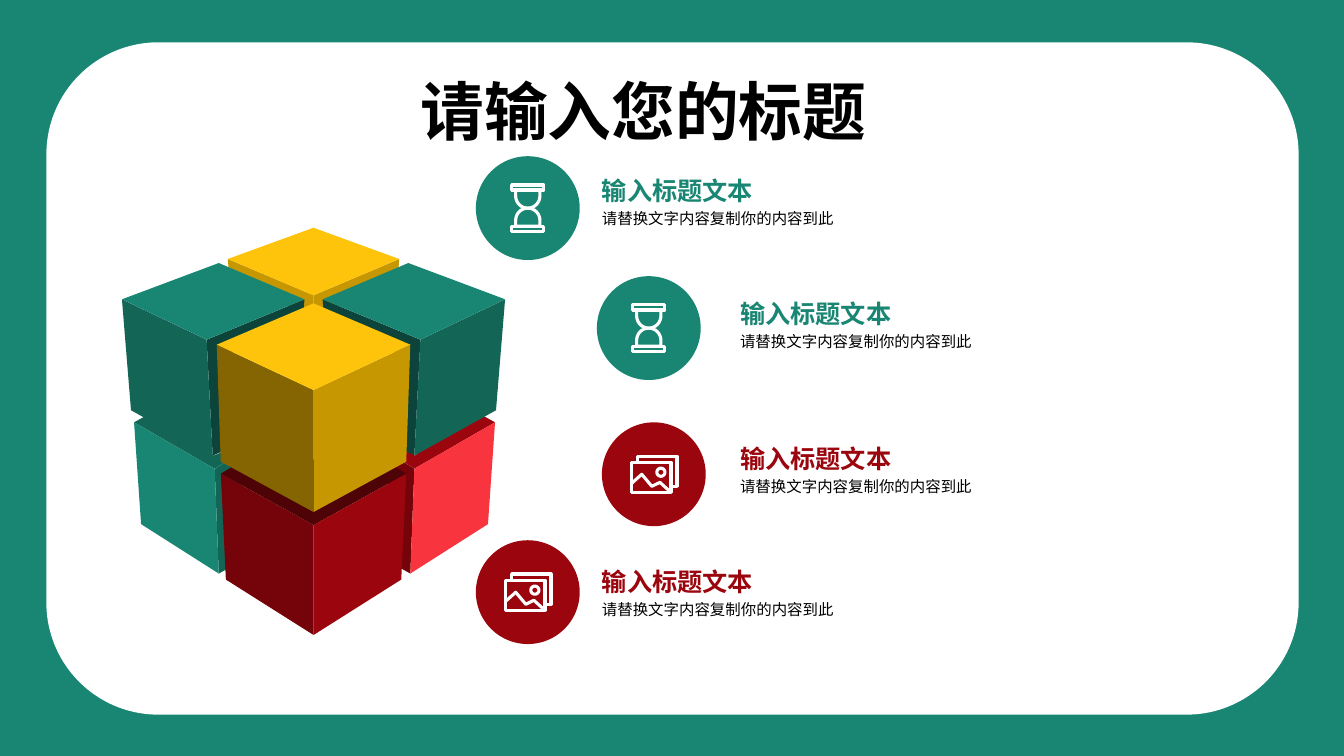
"""Build a slide with a mirrored block cube and four icon-marked headings."""
from math import cos, pi, sin

from pptx import Presentation
from pptx.dml.color import RGBColor
from pptx.enum.shapes import MSO_SHAPE as Shape
from pptx.enum.text import MSO_ANCHOR as Anchor
from pptx.util import Inches, Pt

COLORS = {
    "green": "198673", "green_mid": "136556", "green_dark": "0C433A",
    "yellow": "FEC40C", "yellow_mid": "C79701", "yellow_dark": "846501",
    "red": "9B050E", "red_mid": "74040A", "red_dark": "4E0307", "red_light": "F8343F",
    "white": "FFFFFF", "black": "000000",
}
RGB = {name: RGBColor.from_string(value) for name, value in COLORS.items()}
AXIS = 3.11
LOWER_AXIS = 3.12
DISC = 1.03
HEADING_HEIGHT = 0.42
STROKE = Pt(2.2)


def mirror(points, axis):
    return [(2 * axis - x, y) for x, y in points]


def draw(points, color, closed=True, stroked=False):
    start, *rest = [(Inches(x), Inches(y)) for x, y in points]
    builder = slide.shapes.build_freeform(*start)
    builder.add_line_segments(rest, close=closed)
    outline = builder.convert_to_shape()
    outline.shadow.inherit = False
    if stroked:
        outline.fill.background()
        outline.line.color.rgb = RGB[color]
        outline.line.width = STROKE
    else:
        outline.fill.solid()
        outline.fill.fore_color.rgb = RGB[color]
        outline.line.fill.background()


prs = Presentation()
prs.slide_width, prs.slide_height = Inches(13.33), Inches(7.5)
slide = prs.slides.add_slide(prs.slide_layouts[6])
slide.background.fill.solid()
slide.background.fill.fore_color.rgb = RGB["green"]

entries = [
    ("hourglass", "green", 4.72, 1.55, 5.97, 1.62),
    ("hourglass", "green", 5.92, 2.74, 7.34, 2.84),
    ("photo", "red", 5.97, 4.19, 7.34, 4.28),
    ("photo", "red", 4.72, 5.36, 5.97, 5.50),
]
panel = (Shape.ROUNDED_RECTANGLE, "white", 0.46, 0.42, 12.42, 6.67)
discs = [(Shape.OVAL, color, x, y, DISC, DISC) for _, color, x, y, _, _ in entries]
for kind, color, x, y, w, h in [panel] + discs:
    base = slide.shapes.add_shape(kind, Inches(x), Inches(y), Inches(w), Inches(h))
    base.shadow.inherit = False
    base.fill.solid()
    base.fill.fore_color.rgb = RGB[color]
    base.line.fill.background()

# Corners of the left half of the cube; the right half is its mirror image.
back_tip, back_side, back_near = (AXIS, 2.26), (2.26, 2.57), (AXIS, 2.93)
side_far, side_back, side_inner, side_near = (1.21, 2.97), (2.17, 2.61), (3.02, 2.97), (2.05, 3.37)
side_far_foot, side_near_foot = (1.30, 4.07), (2.11, 4.52)
front_back, front_side, front_near = (AXIS, 3.01), (2.15, 3.42), (AXIS, 3.87)
front_side_foot, front_near_foot = (2.19, 4.58), (AXIS, 5.08)
low_side_far, low_side_back, low_side_near = (1.33, 4.19), (1.64, 4.02), (2.13, 4.65)
low_side_far_foot, low_side_near_foot = (1.40, 5.20), (2.17, 5.69)
low_front_back, low_front_side, low_front_near = (2.42, 4.56), (2.19, 4.70), (AXIS, 5.21)
low_front_side_foot, low_front_near_foot = (2.24, 5.75), (AXIS, 6.30)

back_wall = [back_side, (2.27, 2.70), (2.85, 2.97), (2.88, 3.14), (AXIS, 3.04), back_near]
low_inner_wall = [low_side_near, low_side_near_foot, (2.44, 5.54), (2.37, 4.50)]
side_inner_wall = [side_near, side_near_foot, (2.29, 4.44), (2.27, 3.52), (3.01, 3.09), side_inner]
low_side_top = [low_side_far, low_side_back, (2.12, 4.52), (2.24, 4.47), (2.24, 4.58), low_side_near]
low_side_wall = [low_side_far, low_side_near, low_side_near_foot, low_side_far_foot]
side_wall = [side_far, side_near, side_near_foot, side_far_foot]
front_wall = [front_side, front_near, front_near_foot, front_side_foot]
low_front_wall = [low_front_side, low_front_near, low_front_near_foot, low_front_side_foot]
side_top = [side_far, side_back, side_inner, side_near]

back_faces = [
    (back_wall, "yellow_mid", "yellow_mid", AXIS),
    (low_inner_wall, "green_mid", "red_mid", LOWER_AXIS),
    (side_inner_wall, "green_dark", "green_dark", AXIS),
    (low_side_top, "green_mid", "red", LOWER_AXIS),
]
near_faces = [
    (low_side_wall, "green", "red_light", LOWER_AXIS),
    (side_wall, "green_mid", "green_mid", AXIS),
    (low_front_wall, "red_mid", "red", AXIS),
    (front_wall, "yellow_dark", "yellow_mid", AXIS),
    (side_top, "green", "green", AXIS),
]
low_front_top = [low_front_back, low_front_side, low_front_near]
front_top = [front_back, front_side, front_near]
back_top = [back_tip, back_side, back_near]

for faces, tops in [
    (back_faces, [(low_front_top, "red_dark")]),
    (near_faces, [(front_top, "yellow"), (back_top, "yellow")]),
]:
    for left_face, left_color, right_color, axis in faces:
        draw(left_face, left_color)
        draw(mirror(left_face, axis), right_color)
    for left_half, color in tops:
        draw(left_half + mirror(left_half, AXIS)[::-1], color)

# Icon strokes are measured from the centre of the disc.
circle = [(cos(pi * i / 16), sin(pi * i / 16)) for i in range(32)]
bar_half, bar_top, bar_foot, bulb = 0.16, -0.23, -0.18, 0.12
bar = [(-bar_half, bar_top), (bar_half, bar_top), (bar_half, bar_foot), (-bar_half, bar_foot)]
bowl = [(bulb * x, bulb * (y - 1)) for x, y in circle[:17]]
glass_half = [bar, [(bulb, bar_foot)] + bowl + [(-bulb, bar_foot)]]

left, top, right, bottom, step = -0.22, -0.12, 0.17, 0.18, 0.06
front_frame = [(left, top), (right, top), (right, bottom), (left, bottom)]
rear_frame = [(left + step, top), (left + step, top - step), (right + step, top - step),
              (right + step, bottom - step), (right, bottom - step)]
ridge = [(left, 0.09), (-0.12, 0), (-0.02, 0.12), (0.06, 0.08), (right, bottom)]
sun = [(0.07 + 0.04 * x, -0.02 + 0.04 * y) for x, y in circle]

icons = {
    "hourglass": [(points, True) for points in glass_half]
    + [([(x, -y) for x, y in points], True) for points in glass_half],
    "photo": [(front_frame, True), (rear_frame, False), (ridge, False), (sun, True)],
}

styles = {
    "title": (45.5, "Noto Sans CJK JP", True, Anchor.TOP, 1),
    "heading": (18, "Arial", True, Anchor.BOTTOM, 1),
    "detail": (11, "Arial", False, Anchor.TOP, 1.2),
}
texts = [("title", "请输入您的标题", "black", 4.17, 0.71, 4.55, 0.77)]
for icon, color, disc_x, disc_y, x, y in entries:
    for points, closed in icons[icon]:
        centred = [(disc_x + DISC / 2 + px, disc_y + DISC / 2 + py) for px, py in points]
        draw(centred, "white", closed, stroked=True)
    texts += [
        ("heading", "输入标题文本", color, x, y, 5.21, HEADING_HEIGHT),
        ("detail", "请替换文字内容复制你的内容到此", "black", x, y + HEADING_HEIGHT, 5.21, 0.96),
    ]

for style, words, color, x, y, w, h in texts:
    size, face, bold, anchor, spacing = styles[style]
    frame = slide.shapes.add_textbox(Inches(x), Inches(y), Inches(w), Inches(h)).text_frame
    frame.word_wrap = True
    frame.vertical_anchor = anchor
    frame.margin_left = frame.margin_right = frame.margin_top = frame.margin_bottom = 0
    line = frame.paragraphs[0]
    line.text = words
    line.line_spacing = spacing
    line.font.size, line.font.name, line.font.bold = Pt(size), face, bold
    line.font.color.rgb = RGB[color]

prs.save("out.pptx")
